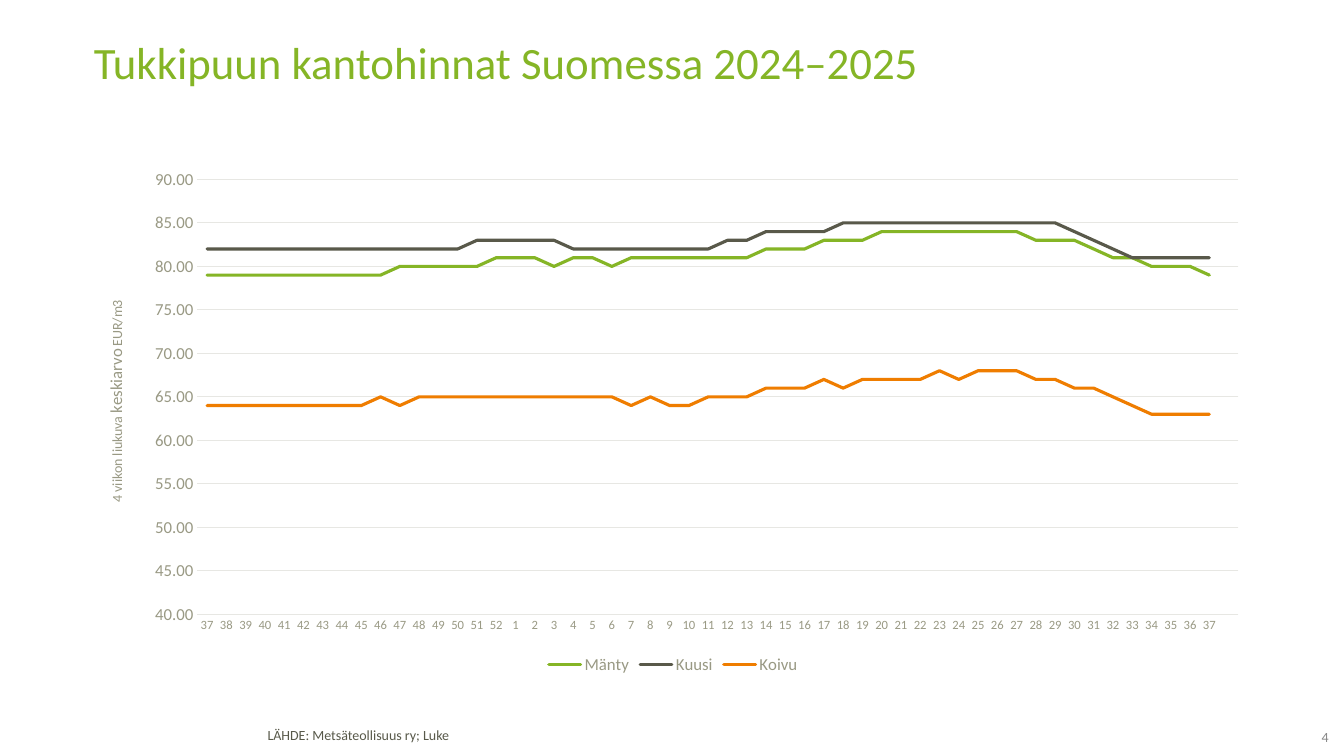
from lxml import etree
from pptx import Presentation
from pptx import util as u
from pptx.chart.data import CategoryChartData
from pptx.dml.color import RGBColor
from pptx.enum import chart as charts, text
from pptx.oxml import parse_xml
from pptx.oxml.ns import nsdecls, qn

FONT = "Calibri"
COLORS = {
    "green": "85B526", "dark": "59594A", "orange": "EF7D00", "source": "58594A",
    "label": "999984", "grid": "E7E7E3", "number": "878787",
}
# text, (left, top, width, height), insets, size, color, line spacing, align, anchor
TEXTS = [
    ("Tukkipuun kantohinnat Suomessa 2024–2025", (60, 28.4, 842, 70.5),
     (7.2, 3.6, 7.2, 3.6), 32, "green", 0.8, "LEFT", "TOP"),
    ("LÄHDE: Metsäteollisuus ry; Luke", (184, 517, 517, 19.4),
     (7.2, 3.6, 7.2, 3.6), 10, "source", 0.85, "LEFT", "TOP"),
    ("4", (911, 521.3, 38, 13.7), (0, 0, 0, 2.9), 10, "number", 1.0, "RIGHT", "MIDDLE"),
]
CHART_BOX = (59.8, 113, 842, 371.5)
PLOT_LAYOUT = {"x": 0.0965, "y": 0.041, "w": 0.883, "h": 0.836}
TITLE_LAYOUT = {"x": 0.015, "y": 0.267}
AXIS_TITLE = [("4 viikon liukuva ", 10), ("keskiarvo", 12), (" EUR/m3", 10)]
WEEKS = [str(week) for week in [*range(37, 53), *range(1, 38)]] + [""]
PRICES = [
    ("Mänty", "green", [
        79, 79, 79, 79, 79, 79, 79, 79, 79, 79, 80, 80, 80, 80, 80, 81, 81, 81,
        80, 81, 81, 80, 81, 81, 81, 81, 81, 81, 81, 82, 82, 82, 83, 83, 83, 84,
        84, 84, 84, 84, 84, 84, 84, 83, 83, 83, 82, 81, 81, 80, 80, 80, 79, None]),
    ("Kuusi", "dark", [
        82, 82, 82, 82, 82, 82, 82, 82, 82, 82, 82, 82, 82, 82, 83, 83, 83, 83,
        83, 82, 82, 82, 82, 82, 82, 82, 82, 83, 83, 84, 84, 84, 84, 85, 85, 85,
        85, 85, 85, 85, 85, 85, 85, 85, 85, 84, 83, 82, 81, 81, 81, 81, 81, None]),
    ("Koivu", "orange", [
        64, 64, 64, 64, 64, 64, 64, 64, 64, 65, 64, 65, 65, 65, 65, 65, 65, 65,
        65, 65, 65, 65, 64, 65, 64, 64, 65, 65, 65, 66, 66, 66, 67, 66, 67, 67,
        67, 67, 68, 67, 68, 68, 68, 67, 67, 66, 66, 65, 64, 63, 63, 63, 63, None]),
]


def color(name):
    return RGBColor.from_string(COLORS[name])


def set_font(font, size, color_name):
    font.name = FONT
    font.size = u.Pt(size)
    font.bold = False
    font.color.rgb = color(color_name)


def set_line(line, color_name, width):
    line.color.rgb = color(color_name)
    line.width = u.Pt(width)


def manual_layout(fractions, inner=False):
    """Return a c:layout element placed by fractions of the chart size."""
    layout = parse_xml(f"<c:layout {nsdecls('c')}><c:manualLayout/></c:layout>")
    settings = {"layoutTarget": "inner"} if inner else {}
    settings.update({"xMode": "edge", "yMode": "edge"}, **fractions)
    for tag, value in settings.items():
        etree.SubElement(layout[0], qn(f"c:{tag}")).set("val", str(value))
    return layout


def add_text(slide, words, box, insets, size, color_name, spacing, align, anchor):
    shape = slide.shapes.add_textbox(*map(u.Pt, box))
    frame = shape.text_frame
    frame.word_wrap = True
    frame.margin_left, frame.margin_top, frame.margin_right, frame.margin_bottom = map(u.Pt, insets)
    frame.vertical_anchor = text.MSO_ANCHOR[anchor]
    paragraph = frame.paragraphs[0]
    paragraph.text = words
    paragraph.alignment = text.PP_ALIGN[align]
    paragraph.line_spacing = spacing
    set_font(paragraph.font, size, color_name)


def style_axes(chart):
    weeks, prices = chart.category_axis, chart.value_axis
    for axis, size in ((weeks, 9), (prices, 12)):
        axis.major_tick_mark = axis.minor_tick_mark = charts.XL_TICK_MARK.NONE
        set_font(axis.tick_labels.font, size, "label")
    set_line(weeks.format.line, "grid", 0.75)
    prices.format.line.fill.background()
    prices.minimum_scale, prices.maximum_scale, prices.major_unit = 40, 90, 5
    prices.tick_labels.number_format = "#,##0.00"
    prices.tick_labels.number_format_is_linked = False
    set_line(prices.major_gridlines.format.line, "grid", 0.75)

    title = prices.axis_title
    frame = title.text_frame
    body = frame._txBody.find(qn("a:bodyPr"))
    body.set("rot", "-5400000")
    body.set("vert", "horz")
    for words, size in AXIS_TITLE:
        run = frame.paragraphs[0].add_run()
        run.text = words
        set_font(run.font, size, "label")
    element = title._element
    for old in element.findall(qn("c:layout")):
        element.remove(old)
    element.find(qn("c:tx")).addnext(manual_layout(TITLE_LAYOUT))


def add_price_chart(slide):
    data = CategoryChartData(number_format="#,##0.00")
    data.categories = WEEKS
    for name, _, values in PRICES:
        data.add_series(name, values)
    chart = slide.shapes.add_chart(charts.XL_CHART_TYPE.LINE, *map(u.Pt, CHART_BOX), data).chart
    set_font(chart.font, 10, "dark")
    chart.has_title = False
    chart.has_legend = True
    chart.legend.position = charts.XL_LEGEND_POSITION.BOTTOM
    chart.legend.include_in_layout = False
    set_font(chart.legend.font, 12, "label")
    plot = chart.plots[0]
    plot.vary_by_categories = False
    for series, (_, color_name, _) in zip(plot.series, PRICES):
        series.smooth = False
        series.marker.style = charts.XL_MARKER_STYLE.NONE
        set_line(series.format.line, color_name, 2.25)
        series.format.line._get_or_add_ln().set("cap", "rnd")
    style_axes(chart)
    area = chart._chartSpace.chart.plotArea
    for old in area.findall(qn("c:layout")):
        area.remove(old)
    area.insert(0, manual_layout(PLOT_LAYOUT, inner=True))


def main():
    presentation = Presentation()
    presentation.slide_width, presentation.slide_height = u.Pt(960), u.Pt(540)
    slide = presentation.slides.add_slide(presentation.slide_layouts[6])
    for entry in TEXTS:
        add_text(slide, *entry)
    add_price_chart(slide)
    presentation.save("out.pptx")


if __name__ == "__main__":
    main()
